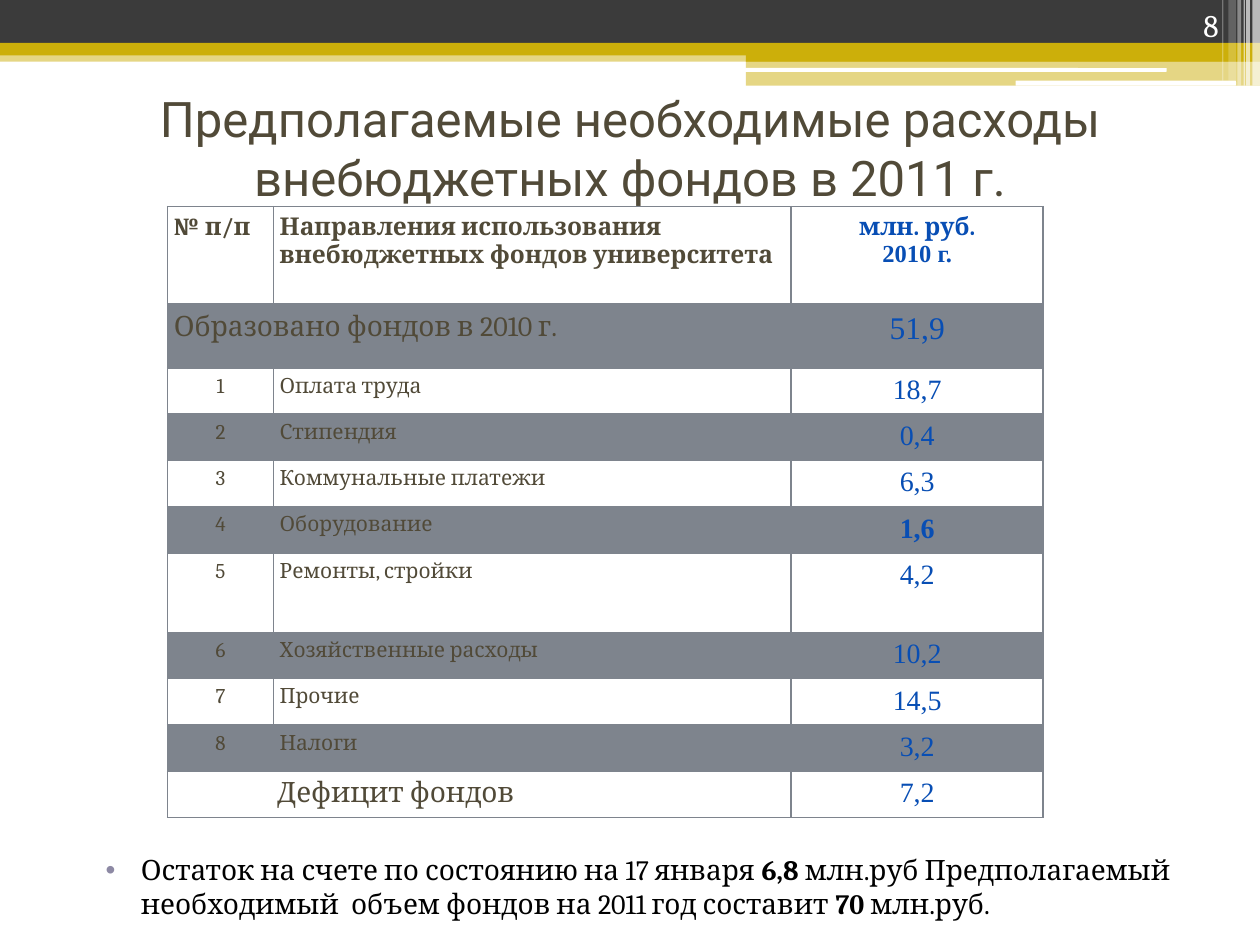
from lxml import etree
from pptx import Presentation
from pptx import util as u
from pptx.dml.color import RGBColor
from pptx.enum import shapes, text
from pptx.oxml import ns

THEME = {
    "brown": "514A38", "blue": "084EB4", "gold": "CCAF0A", "dark": "3B3B3B",
    "white": "FFFFFF", "black": "000000", "grid": "7E848D", "bullet": "8D89A4",
    "heading": "Roboto", "body": "Cambria", "figure": "Times New Roman",
    "title_size": 28, "number_size": 18, "note_size": 16, "header_size": 14,
    "total_size": 16, "item_size": 12, "figure_size": 16, "main_figure_size": 18,
}

TITLE = "Предполагаемые необходимые расходы внебюджетных фондов в 2011 г."
PAGE_NUMBER = "8"
HEADER = ("№ п/п", "Направления использования внебюджетных фондов университета")
HEADER_UNITS = ("млн. руб.", "2010 г.")
FORMED = ("Образовано фондов в 2010 г.", "51,9")
EXPENSES = [
    ("Оплата труда", "18,7"),
    ("Стипендия", "0,4"),
    ("Коммунальные платежи", "6,3"),
    ("Оборудование", "1,6"),
    ("Ремонты, стройки", "4,2"),
    ("Хозяйственные расходы", "10,2"),
    ("Прочие", "14,5"),
    ("Налоги", "3,2"),
]
HIGHLIGHTED = "Оборудование"
DEFICIT = ("Дефицит фондов", "7,2")
NOTE = [
    ("Остаток на счете по состоянию на 17 января ", False),
    ("6,8 ", True),
    ("млн.руб Предполагаемый необходимый  объем фондов на 2011 год составит ", False),
    ("70", True),
    (" млн.руб.", False),
]

BANDS = [
    (0, 0.4, 10, 0.09, "gold", 50),
    (0, 0, 10, 0.34, "dark", 100),
    (0, 0.34, 10, 0.1, "gold", 100),
    (5.92, 0.39, 4.08, 0.1, "gold", 100),
    (5.92, 0.48, 4.08, 0.2, "gold", 50),
]
ROUNDED_LINES = [(5.91, 0.54, 3.35, 0.03), (8.06, 0.64, 1.75, 0.04)]
STRIPES = [
    (9.94, 0.06, 0.68, 65), (9.89, 0.03, 0.68, 65), (9.87, 0.01, 0.68, 60),
    (9.82, 0.03, 0.68, 40), (9.75, 0.06, 0.64, 20), (9.7, 0.01, 0.64, 30),
]

TABLE_BOX = (1.33, 1.64, 6.95, 4.85)
COLUMNS = (0.84, 4.11, 2)
HEADER_HEIGHT, FORMED_HEIGHT, TALL_HEIGHT = 0.78, 0.5, 0.63
TALL_ITEM = "Ремонты, стройки"
CENTER, RIGHT = text.PP_ALIGN.CENTER, text.PP_ALIGN.RIGHT


def inches(box):
    return [u.Inches(length) for length in box]


def color(name):
    return RGBColor.from_string(THEME[name])


def paint(fill, name, alpha=100):
    fill.solid()
    fill.fore_color.rgb = color(name)
    if alpha < 100:
        srgb = fill._xPr.find(".//" + ns.qn("a:srgbClr"))
        etree.SubElement(srgb, ns.qn("a:alpha"), val=str(alpha * 1000))


def style(paragraph, size, font, tint, bold=False, align=None):
    paragraph.alignment = align
    for run in paragraph.runs:
        run.font.size = u.Pt(THEME[size])
        run.font.name = THEME[font]
        run.font.color.rgb = color(tint)
        run.font.bold = bold


def add_band(slide, box, tint, alpha=100, kind=shapes.MSO_SHAPE.RECTANGLE):
    band = slide.shapes.add_shape(kind, *inches(box))
    band.shadow.inherit = False
    band.line.fill.background()
    paint(band.fill, tint, alpha)


def add_frame(slide, box, anchor):
    frame = slide.shapes.add_textbox(*inches(box)).text_frame
    frame.word_wrap = True
    frame.vertical_anchor = anchor
    return frame


def add_decoration(slide):
    for *box, tint, alpha in BANDS:
        add_band(slide, box, tint, alpha)
    for box in ROUNDED_LINES:
        add_band(slide, box, "white", kind=shapes.MSO_SHAPE.ROUNDED_RECTANGLE)
    for left, width, height, alpha in STRIPES:
        add_band(slide, (left, 0, width, height), "white", alpha)


def set_borders(cell, top, bottom):
    properties = cell._tc.get_or_add_tcPr()
    for side, width in (("L", 1), ("R", 1), ("T", top), ("B", bottom)):
        line = etree.SubElement(properties, ns.qn("a:ln" + side), w=str(u.Pt(width)))
        fill = etree.SubElement(line, ns.qn("a:solidFill"))
        etree.SubElement(fill, ns.qn("a:srgbClr"), val=THEME["grid"])


def fill_cell(cell, content, *look, **options):
    cell.text_frame.text = content
    for paragraph in cell.text_frame.paragraphs:
        style(paragraph, *look, **options)


def add_expenses(slide):
    count = len(EXPENSES) + 3
    table = slide.shapes.add_table(count, len(COLUMNS), *inches(TABLE_BOX)).table
    table.first_row = table.horz_banding = False
    for column, width in zip(table.columns, COLUMNS):
        column.width = u.Inches(width)

    fixed = HEADER_HEIGHT + FORMED_HEIGHT + TALL_HEIGHT
    item_height = (TABLE_BOX[3] - fixed) / len(EXPENSES)
    item_heights = [TALL_HEIGHT if name == TALL_ITEM else item_height for name, _ in EXPENSES]
    heights = [HEADER_HEIGHT, FORMED_HEIGHT, *item_heights, item_height]
    for index, (row, height) in enumerate(zip(table.rows, heights)):
        row.height = u.Inches(height)
        for cell in row.cells:
            cell.margin_left = cell.margin_right = u.Inches(0.05)
            cell.margin_top = cell.margin_bottom = u.Inches(0.05)
            set_borders(cell, 2 if index == 1 else 1, 2 if index == 0 else 1)
            if index % 2:
                paint(cell.fill, "grid", 20)
            else:
                cell.fill.background()

    for column, label in enumerate(HEADER):
        fill_cell(table.cell(0, column), label, "header_size", "body", "brown", bold=True)
    units = table.cell(0, 2)
    fill_cell(units, "\n".join(HEADER_UNITS), "header_size", "body", "blue", bold=True, align=CENTER)
    units.text_frame.paragraphs[1].runs[0].font.name = THEME["figure"]

    last = count - 1
    for row, (label, amount), size in ((1, FORMED, "main_figure_size"), (last, DEFICIT, "figure_size")):
        table.cell(row, 0).merge(table.cell(row, 1))
        fill_cell(table.cell(row, 0), label, "total_size", "body", "brown")
        fill_cell(table.cell(row, 2), amount, size, "figure", "blue", align=CENTER)
    deficit = table.cell(last, 0).text_frame.paragraphs[0]
    deficit._p.get_or_add_pPr().set("marL", str(u.Inches(0.82)))

    for number, (name, amount) in enumerate(EXPENSES, 1):
        row = number + 1
        fill_cell(table.cell(row, 0), str(number), "item_size", "body", "brown", align=CENTER)
        fill_cell(table.cell(row, 1), name, "item_size", "body", "brown")
        fill_cell(table.cell(row, 2), amount, "figure_size", "figure", "blue",
                  bold=name == HIGHLIGHTED, align=CENTER)


def add_note(slide):
    note = add_frame(slide, (0.62, 6.72, 8.95, 0.49), text.MSO_ANCHOR.TOP).paragraphs[0]
    for words, _ in NOTE:
        note.add_run().text = words
    style(note, "note_size", "body", "black")
    for run, (_, bold) in zip(note.runs, NOTE):
        run.font.bold = bold
    note.space_before = u.Pt(3)
    properties = note._p.get_or_add_pPr()
    properties.set("marL", str(u.Inches(0.4)))
    properties.set("indent", str(u.Inches(-0.28)))
    tint = etree.SubElement(properties, ns.qn("a:buClr"))
    etree.SubElement(tint, ns.qn("a:srgbClr"), val=THEME["bullet"])
    etree.SubElement(properties, ns.qn("a:buFont"), typeface="Arial")
    etree.SubElement(properties, ns.qn("a:buChar"), char="•")


def main():
    deck = Presentation()
    deck.slide_width, deck.slide_height = u.Inches(10), u.Inches(7.5)
    slide = deck.slides.add_slide(deck.slide_layouts[6])
    add_decoration(slide)
    add_expenses(slide)
    title = add_frame(slide, (0, 0.78, 10, 0.78), text.MSO_ANCHOR.MIDDLE)
    title.text = TITLE
    style(title.paragraphs[0], "title_size", "heading", "brown", align=CENTER)
    page = add_frame(slide, (8.94, 0, 0.83, 0.4), text.MSO_ANCHOR.BOTTOM)
    page.text = PAGE_NUMBER
    style(page.paragraphs[0], "number_size", "body", "white", align=RIGHT)
    add_note(slide)
    deck.save("out.pptx")


if __name__ == "__main__":
    main()
